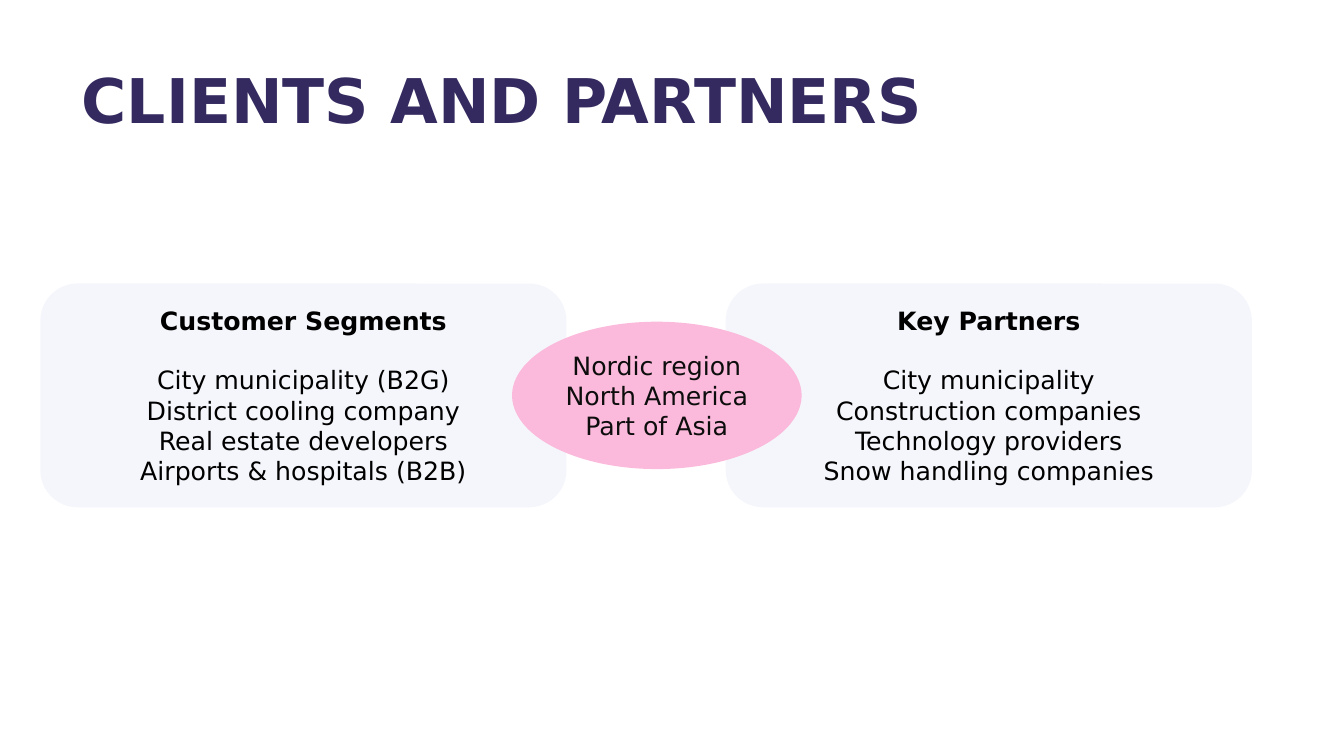
import pptx
import pptx.dml.color
import pptx.enum.shapes
import pptx.enum.text
import pptx.util
from dataclasses import dataclass


@dataclass(frozen=True)
class Theme:
    font: str = "DejaVu Sans"
    title_color: str = "342A5F"
    card_fill: str = "F5F6FB"
    card_text: str = "000000"
    region_fill: str = "FBBADB"
    region_text: str = "0D0D0D"
    title_size: int = 44
    body_size: int = 18
    heading_gap: int = 21


theme = Theme()
shapes = pptx.enum.shapes.MSO_SHAPE
align = pptx.enum.text.PP_ALIGN

presentation = pptx.Presentation()
presentation.slide_width = pptx.util.Inches(13.33)
presentation.slide_height = pptx.util.Inches(7.5)
column = presentation.slide_width / 100
row = presentation.slide_height / 100
slide = presentation.slides.add_slide(presentation.slide_layouts[5])


def write(frame, text, size=theme.body_size, color=theme.card_text, bold=False,
          alignment=align.CENTER, heading=False, line_spacing=1.0):
    frame.word_wrap = True
    frame.auto_size = pptx.enum.text.MSO_AUTO_SIZE.NONE
    frame.vertical_anchor = pptx.enum.text.MSO_ANCHOR.MIDDLE
    for index, line in enumerate(text.split("\n")):
        paragraph = frame.paragraphs[0] if index == 0 else frame.add_paragraph()
        paragraph.alignment = alignment
        paragraph.line_spacing = line_spacing
        if heading and index == 0:
            paragraph.space_after = pptx.util.Pt(theme.heading_gap)
        run = paragraph.add_run()
        run.text = line
        run.font.name = theme.font
        run.font.size = pptx.util.Pt(size)
        run.font.bold = bold or (heading and index == 0)
        run.font.color.rgb = pptx.dml.color.RGBColor.from_string(color)


def add_panel(kind, left, top, width, height, fill):
    shape = slide.shapes.add_shape(kind, round(left * column), round(top * row),
                                   round(width * column), round(height * row))
    shape.shadow.inherit = False
    shape.fill.solid()
    shape.fill.fore_color.rgb = pptx.dml.color.RGBColor.from_string(fill)
    shape.line.fill.background()
    return shape


title = slide.shapes.title
title.left, title.top = round(5.33 * column), round(4 * row)
title.width, title.height = round(73.6 * column), round(19.33 * row)
write(title.text_frame, "CLIENTS AND PARTNERS", size=theme.title_size,
      color=theme.title_color, bold=True, alignment=align.LEFT, line_spacing=0.9)

cards = [
    "Customer Segments\nCity municipality (B2G)\nDistrict cooling company\n"
    "Real estate developers\nAirports & hospitals (B2B)",
    "Key Partners\nCity municipality\nConstruction companies\n"
    "Technology providers\nSnow handling companies",
]
for index, text in enumerate(cards):
    card = add_panel(shapes.ROUNDED_RECTANGLE, 3 + 51 * index, 37.5, 39.15, 29.6,
                     theme.card_fill)
    write(card.text_frame, text, heading=True)

region = add_panel(shapes.OVAL, 38.1, 42.55, 21.55, 19.5, theme.region_fill)
write(region.text_frame, "Nordic region\nNorth America\nPart of Asia",
      color=theme.region_text)

presentation.save("out.pptx")
